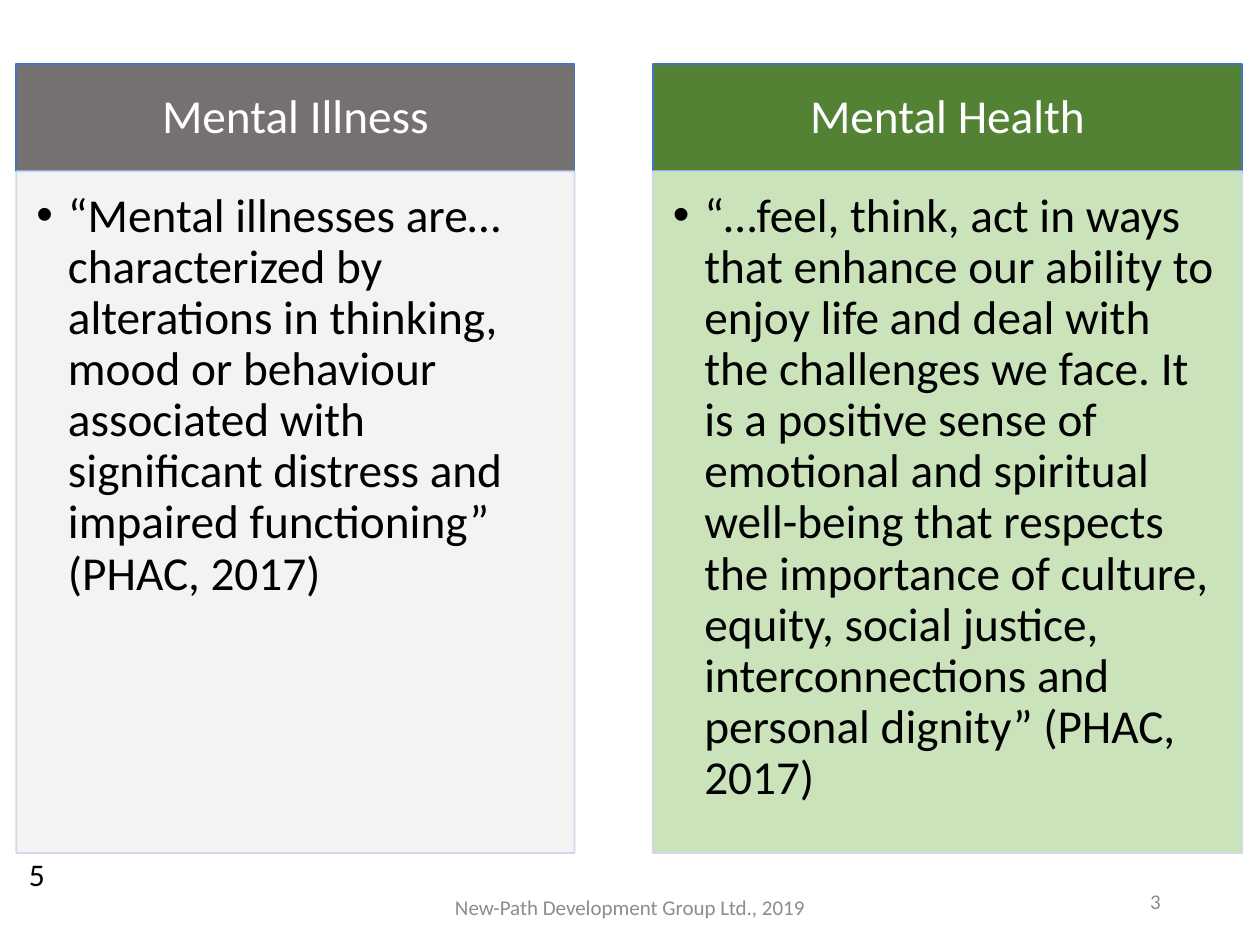
from pptx import Presentation
from pptx.dml.color import RGBColor
from pptx.enum.shapes import MSO_SHAPE
from pptx.enum.text import MSO_ANCHOR, PP_ALIGN
from pptx.oxml.ns import qn
from pptx.util import Pt
from lxml.etree import SubElement

PX = 9144
WHITE = RGBColor(0xFF, 0xFF, 0xFF)
BLACK = RGBColor(0, 0, 0)
MUTED = RGBColor(0x8C, 0x8C, 0x8C)
GRAY = RGBColor(0x76, 0x71, 0x71)
PALE = RGBColor(0xF2, 0xF2, 0xF2)
GREEN = RGBColor(0x54, 0x82, 0x35)
MINT = RGBColor(0xC5, 0xE0, 0xB4)
BLUE = RGBColor(0x44, 0x72, 0xC4)
EDGE = RGBColor(0xCF, 0xD5, 0xEA)

ILLNESS = (
    "“Mental illnesses are… characterized by alterations in thinking, mood or "
    "behaviour associated with significant distress and impaired functioning” "
    "(PHAC, 2017)"
)
HEALTH = (
    "“…feel, think, act in ways that enhance our ability to enjoy life and deal "
    "with the challenges we face. It is a positive sense of emotional and "
    "spiritual well-being that respects the importance of culture, equity, "
    "social justice, interconnections and personal dignity” (PHAC, 2017)"
)


class Deck:
    """Draws styled elements on one slide, with lengths in px."""

    def __init__(self, wide, high, font):
        self.prs = Presentation()
        self.prs.slide_width = wide * PX
        self.prs.slide_height = high * PX
        self.slide = self.prs.slides.add_slide(self.prs.slide_layouts[6])
        self.font = font

    def text(self, shape, words, size, color, align, anchor, inset):
        frame = shape.text_frame
        frame.word_wrap = True
        frame.vertical_anchor = anchor
        left, top, right, bottom = (n * PX for n in inset)
        frame.margin_left, frame.margin_top = left, top
        frame.margin_right, frame.margin_bottom = right, bottom
        para = frame.paragraphs[0]
        para.alignment = align
        run = para.add_run()
        run.text = words
        run.font.name = self.font
        run.font.size = Pt(size)
        run.font.color.rgb = color
        return para

    def label(self, box, words, size, color, align, anchor=MSO_ANCHOR.MIDDLE):
        shape = self.slide.shapes.add_textbox(*(n * PX for n in box))
        self.text(shape, words, size, color, align, anchor, (10, 5, 10, 5))

    def rect(self, box, fill, line):
        shape = self.slide.shapes.add_shape(
            MSO_SHAPE.RECTANGLE, *(n * PX for n in box))
        shape.shadow.inherit = False
        shape.fill.solid()
        shape.fill.fore_color.rgb = fill
        shape.line.color.rgb = line
        shape.line.width = Pt(1)
        return shape

    def header(self, box, words, fill):
        shape = self.rect(box, fill, BLUE)
        para = self.text(shape, words, 27, WHITE, PP_ALIGN.CENTER,
                         MSO_ANCHOR.MIDDLE, (21, 12, 21, 12))
        para.line_spacing = 0.9

    def panel(self, box, words, fill):
        shape = self.rect(box, fill, EDGE)
        for color in shape._element.spPr.iter(qn("a:srgbClr")):
            SubElement(color, qn("a:alpha"), val="90000")
        para = self.text(shape, words, 27, BLACK, PP_ALIGN.LEFT,
                         MSO_ANCHOR.TOP, (16, 16, 21, 24))
        para.line_spacing = 0.9
        props = para._p.get_or_add_pPr()
        props.set("marL", str(25 * PX))
        props.set("indent", str(-25 * PX))
        SubElement(props, qn("a:buFont"), typeface="Arial")
        SubElement(props, qn("a:buChar"), char="•")

    def save(self):
        self.prs.save("out.pptx")


def main():
    deck = Deck(1000, 750, "Calibri")
    deck.label((331, 700, 338, 40), "New-Path Development Group Ltd., 2019",
               12, MUTED, PP_ALIGN.CENTER)
    deck.label((706, 695, 225, 40), "3", 12, MUTED, PP_ALIGN.RIGHT)
    columns = (
        (13, 443, "Mental Illness", GRAY, ILLNESS, PALE),
        (518, 468, "Mental Health", GREEN, HEALTH, MINT),
    )
    for left, wide, title, dark, body, light in columns:
        deck.header((left, 51, wide, 85), title, dark)
        deck.panel((left, 136, wide, 541), body, light)
    deck.label((13, 674, 51, 40), "5", 18, BLACK, PP_ALIGN.LEFT, MSO_ANCHOR.TOP)
    deck.save()


if __name__ == "__main__":
    main()
